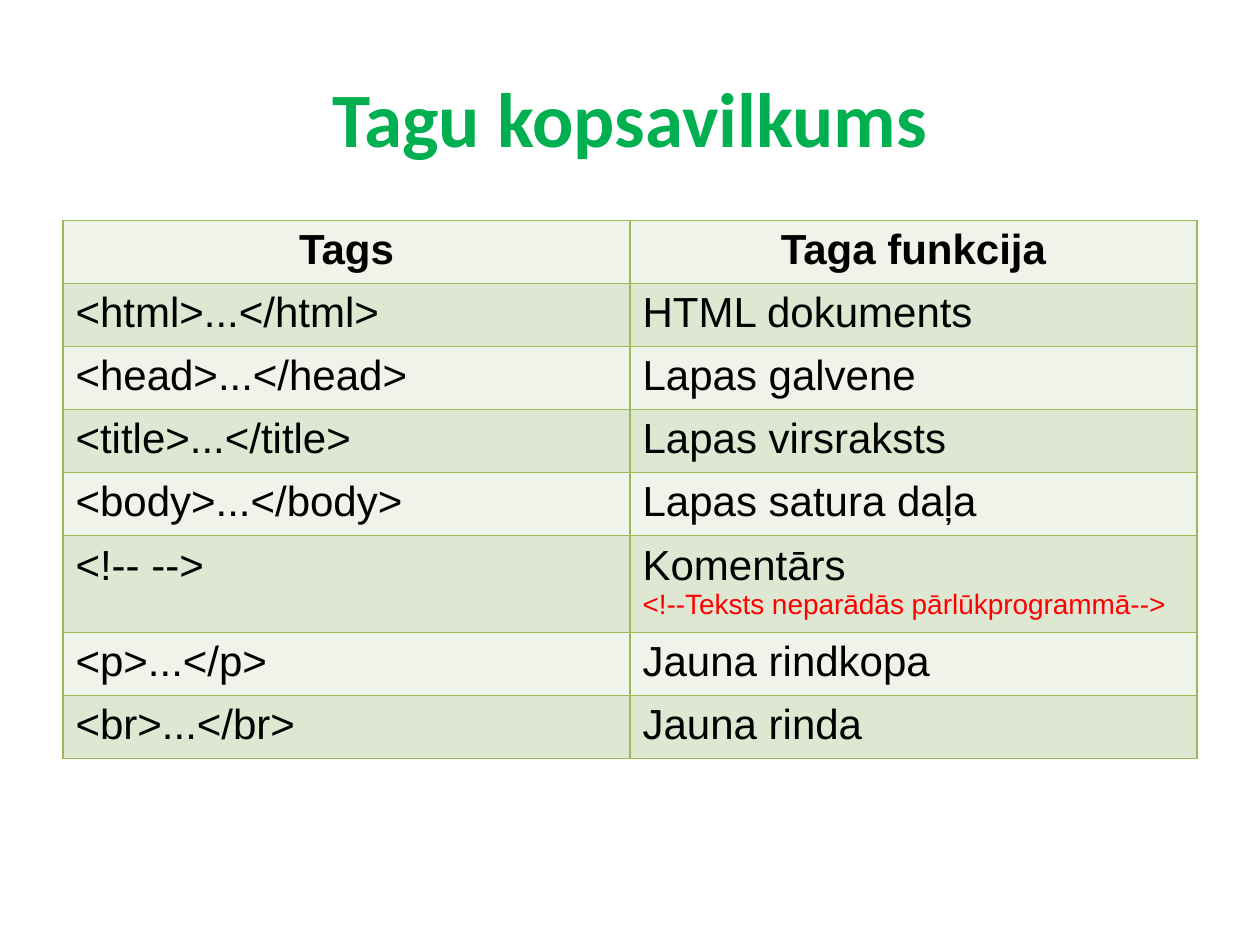
from lxml import etree
from pptx import Presentation
from pptx.dml.color import RGBColor
from pptx.enum.text import MSO_ANCHOR, PP_ALIGN
from pptx.oxml.ns import qn
from pptx.util import Inches, Pt

LEFT, CENTER = PP_ALIGN.LEFT, PP_ALIGN.CENTER
MIDDLE = MSO_ANCHOR.MIDDLE

COLORS = {
    "title": "00B050",
    "text": "000000",
    "note": "FF0000",
    "light": "EFF3EA",
    "dark": "DEE7D1",
    "line": "9BBB59",
}

HEAD = ("Tags", "Taga funkcija")
TAGS = [
    ("<html>...</html>", "HTML dokuments"),
    ("<head>...</head>", "Lapas galvene"),
    ("<title>...</title>", "Lapas virsraksts"),
    ("<body>...</body>", "Lapas satura daļa"),
    ("<!-- -->", "Komentārs"),
    ("<p>...</p>", "Jauna rindkopa"),
    ("<br>...</br>", "Jauna rinda"),
]
NOTE = "<!--Teksts neparādās pārlūkprogrammā-->"
NOTE_ROW = 5


def write(par, text, size=24, font="Arial", color="text", bold=False, align=LEFT):
    par.alignment = align
    run = par.add_run()
    run.text = text
    run.font.size = Pt(size)
    run.font.name = font
    run.font.bold = bold
    run.font.color.rgb = RGBColor.from_string(COLORS[color])


def paint(cell, color):
    """Fill a cell and draw its four borders."""
    cell.fill.solid()
    cell.fill.fore_color.rgb = RGBColor.from_string(COLORS[color])
    props = cell._tc.get_or_add_tcPr()
    for i, side in enumerate(("a:lnL", "a:lnR", "a:lnT", "a:lnB")):
        line = etree.Element(qn(side), w=str(Pt(1)))
        fill = etree.SubElement(line, qn("a:solidFill"))
        etree.SubElement(fill, qn("a:srgbClr"), val=COLORS["line"])
        props.insert(i, line)  # borders come before the fill


def add_title(slide, left, top, width, height):
    box = slide.shapes.add_textbox(left, top, width, height)
    frame = box.text_frame
    frame.word_wrap = True
    frame.vertical_anchor = MIDDLE
    write(frame.paragraphs[0], "Tagu kopsavilkums", size=44, font="Calibri",
          color="title", bold=True, align=CENTER)


def add_tags(slide, left, top, width, height):
    rows = [HEAD] + TAGS
    table = slide.shapes.add_table(
        len(rows), len(HEAD), left, top, width, height).table
    for r, row in enumerate(rows):
        head = r == 0
        for c, text in enumerate(row):
            cell = table.cell(r, c)
            paint(cell, "dark" if r % 2 else "light")
            write(cell.text_frame.paragraphs[0], text, bold=head,
                  align=CENTER if head else LEFT)
    # Example below the comment tag's meaning
    frame = table.cell(NOTE_ROW, 1).text_frame
    write(frame.add_paragraph(), NOTE, size=16, color="note")


def main():
    deck = Presentation()
    deck.slide_width, deck.slide_height = Inches(10), Inches(7.5)
    slide = deck.slides.add_slide(deck.slide_layouts[6])
    add_title(slide, Inches(0.5), Inches(0.3), Inches(9), Inches(1.25))
    # Rows grow from this height to fit their text
    add_tags(slide, Inches(0.5), Inches(1.75), Inches(9), Inches(3.28))
    deck.save("out.pptx")


if __name__ == "__main__":
    main()
